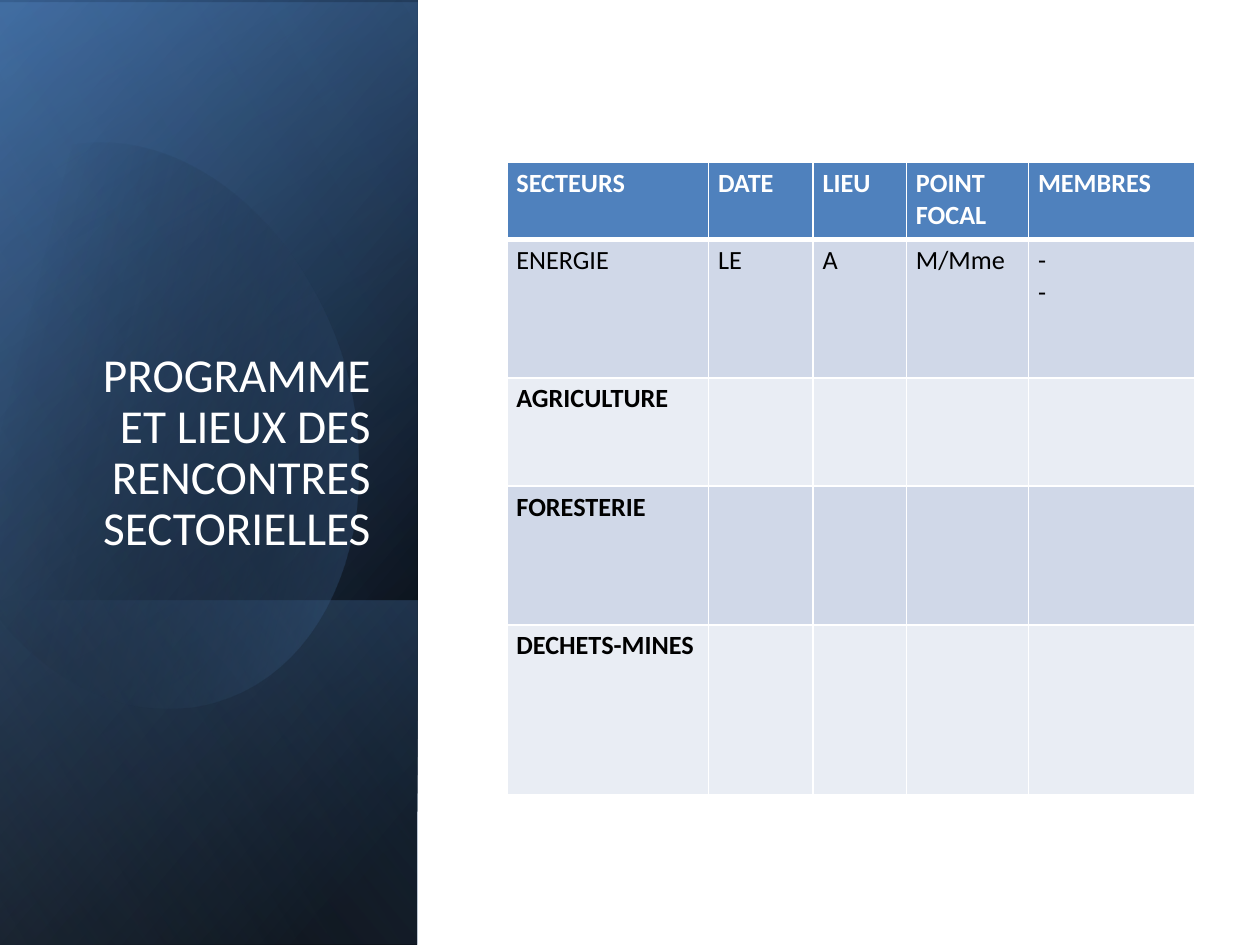
from math import cos, radians, sin
from lxml.etree import SubElement
from pptx import Presentation
from pptx.dml.color import RGBColor
from pptx.enum.shapes import MSO_SHAPE
from pptx.enum.text import MSO_ANCHOR, PP_ALIGN
from pptx.oxml.ns import qn
from pptx.util import Pt

BLUE, DARK, WHITE = "4F81BD", "000000", "FFFFFF"
BANDS = ["E9EDF4", "D0D8E8"]
COLS = [115.2, 59.8, 53.3, 69.8, 95]
ROWS = [43.9, 79.2, 61.9, 79.2, 97.2]
CELLS = [
    ["SECTEURS", "DATE", "LIEU", "POINT FOCAL", "MEMBRES"],
    ["ENERGIE", "LE", "A", "M/Mme", "-\n-"],
    ["AGRICULTURE"],
    ["FORESTERIE"],
    ["DECHETS-MINES"],
]
PANELS = [
    (0, 540, [(8, DARK, 100), (100, "376092", 100)], 50),
    (1.5, 540, [(0, DARK, 0), (99, BLUE, 46)], 30),
    (343, 197, [(2, BLUE, 29), (100, DARK, 30)], 130),
]
SHEEN = (0, 540, [(0, DARK, 0), (99, "95B3D7", 11)], 120)
START = (69, 82)
ARCS = [
    [(123, 88), (176, 138), (197, 209)],
    [(221, 297), (189, 382), (123, 401)],
    [(82, 413), (38, 396), (5, 360)],
    [(-2, 351)],
    [(-18, 120)],
    [(-11, 111)],
    [(1, 98), (16, 90), (32, 85)],
    [(45, 81), (57, 81), (69, 82)],
]
HUB = (85.7, 240.8)
TILT = 16.1


def tint(code):
    return RGBColor.from_string(code)


def style(text, size, code, bold=False):
    for para in text.paragraphs:
        for run in para.runs:
            font = run.font
            font.name, font.size, font.bold = "Calibri", Pt(size), bold
            font.color.rgb = tint(code)


def shade(shape, stops, angle):
    shape.shadow.inherit = False
    shape.line.fill.background()
    fill = shape.fill
    fill.gradient()
    fill.gradient_angle = 360 - angle
    for stop, (place, code, _) in zip(fill.gradient_stops, stops):
        stop.position = place / 100
        stop.color.rgb = tint(code)
    marks = shape._element.spPr.iter(qn("a:srgbClr"))
    for mark, (_, _, alpha) in zip(list(marks), stops):
        if alpha < 100:
            SubElement(mark, qn("a:alpha")).set("val", str(alpha * 1000))


def add_panel(slide, top, tall, stops, angle):
    wide = 238.5
    left = (wide - tall) / 2
    shape = slide.shapes.add_shape(
        MSO_SHAPE.RECTANGLE, Pt(left), Pt(top - left), Pt(tall), Pt(wide))
    shape.rotation = 90
    shape._element.spPr.xfrm.set("flipH", "1")
    shade(shape, stops, angle)


def trace(steps=24):
    here = START
    yield here
    for arc in ARCS:
        if len(arc) == 1:
            yield arc[0]
        else:
            for i in range(1, steps + 1):
                t = i / steps
                u = 1 - t
                rate = (u ** 3, 3 * u * u * t, 3 * u * t * t, t ** 3)
                yield tuple(sum(r * p[k] for r, p in zip(rate, [here, *arc]))
                            for k in (0, 1))
        here = arc[-1]


def turn(spot):
    x, y = spot[0] - HUB[0], spot[1] - HUB[1]
    c, s = cos(radians(TILT)), sin(radians(TILT))
    return Pt(HUB[0] + x * c - y * s), Pt(HUB[1] + x * s + y * c)


def add_blob(slide):
    spots = [turn(spot) for spot in trace()]
    form = slide.shapes.build_freeform(*spots[0], scale=1.0)
    form.add_line_segments(spots[1:], close=True)
    shape = form.convert_to_shape()
    shape.rotation = 360 - TILT
    shade(shape, [(29, DARK, 0), (100, BLUE, 43)], 30)


def set_title(slide):
    title = slide.shapes.title
    title._element.getparent().append(title._element)
    title.left, title.top = Pt(34.6), Pt(132.5)
    title.width, title.height = Pt(184.3), Pt(188.6)
    text = title.text_frame
    text.text = "PROGRAMME ET LIEUX DES RENCONTRES SECTORIELLES"
    text.word_wrap = True
    text.vertical_anchor = MSO_ANCHOR.BOTTOM
    text.paragraphs[0].alignment = PP_ALIGN.RIGHT
    text.paragraphs[0].line_spacing = 0.9
    style(text, 27, WHITE)


def edge(cell, side, width):
    line = SubElement(cell._tc.get_or_add_tcPr(), qn("a:ln" + side))
    line.set("w", str(Pt(width)))
    fill = SubElement(line, qn("a:solidFill"))
    SubElement(fill, qn("a:srgbClr")).set("val", WHITE)


def set_cell(cell, row, text):
    cell.margin_left = cell.margin_right = Pt(5.5)
    cell.margin_top = cell.margin_bottom = Pt(2.8)
    for side in "LRTB":
        thick = (row, side) in [(0, "B"), (1, "T")]
        edge(cell, side, 3 if thick else 1)
    cell.fill.solid()
    cell.fill.fore_color.rgb = tint(BANDS[row % 2] if row else BLUE)
    if text:
        cell.text_frame.text = text
        style(cell.text_frame, 15, DARK if row else WHITE, row != 1)


def add_grid(slide):
    table = slide.shapes.add_table(
        len(ROWS), len(COLS), Pt(289.6), Pt(92.9),
        Pt(sum(COLS)), Pt(sum(ROWS))).table
    for col, width in zip(table.columns, COLS):
        col.width = Pt(width)
    for i, (row, height) in enumerate(zip(table.rows, ROWS)):
        row.height = Pt(height)
        for j, cell in enumerate(row.cells):
            set_cell(cell, i, CELLS[i][j] if j < len(CELLS[i]) else "")


def main():
    deck = Presentation()
    deck.slide_width, deck.slide_height = Pt(720), Pt(540)
    slide = deck.slides.add_slide(deck.slide_layouts[5])
    for panel in PANELS:
        add_panel(slide, *panel)
    add_blob(slide)
    add_panel(slide, *SHEEN)
    set_title(slide)
    add_grid(slide)
    deck.save("out.pptx")


if __name__ == "__main__":
    main()
